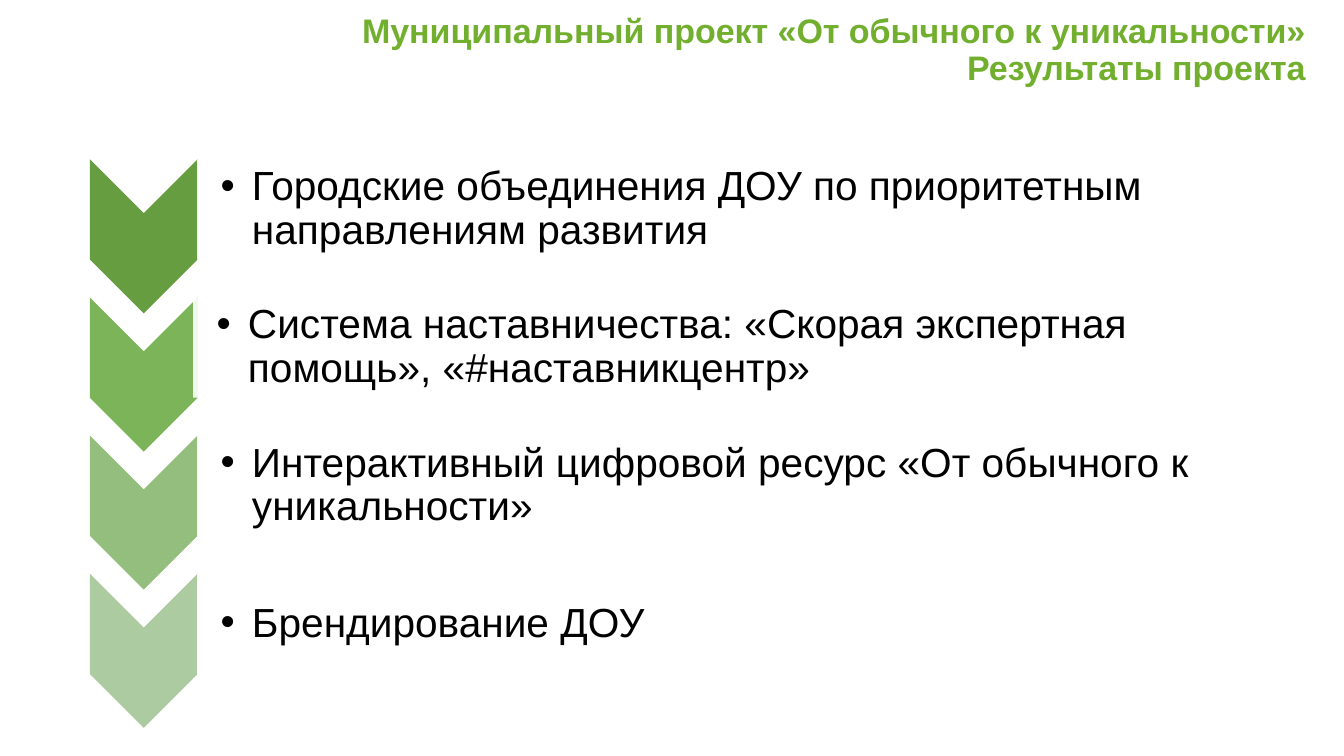
from dataclasses import dataclass

from lxml import etree
from pptx import Presentation
from pptx import util as u
from pptx.dml.color import RGBColor
from pptx.enum import shapes, text
from pptx.oxml.ns import qn


@dataclass(frozen=True)
class Theme:
    font: str = "Arial"
    title_size: float = 24.3
    item_size: float = 29
    title_color: str = "72AF2F"
    item_color: str = "000000"
    panel_color: str = "FFFFFF"
    panel_alpha: int = 90
    spacing: float = 0.9
    indent: float = 0.31


def apply(target, values):
    for name, value in values.items():
        setattr(target, name, value)


class Deck:
    def __init__(self, theme, width, height, layout):
        self.theme = theme
        self.prs = Presentation()
        apply(self.prs, {"slide_width": u.Inches(width), "slide_height": u.Inches(height)})
        self.s = self.prs.slides.add_slide(self.prs.slide_layouts[layout])

    def box(self, left, top, width, height):
        w, h = self.prs.slide_width / 100, self.prs.slide_height / 100
        return [round(v) for v in (left * w, top * h, width * w, height * h)]

    def frame(self, sp, area, margins):
        apply(sp, dict(zip(("left", "top", "width", "height"), self.box(*area))))
        tf = sp.text_frame
        apply(tf, {"word_wrap": True, "auto_size": text.MSO_AUTO_SIZE.NONE,
                   "vertical_anchor": text.MSO_ANCHOR.MIDDLE})
        names = ("margin_left", "margin_top", "margin_right", "margin_bottom")
        apply(tf, dict(zip(names, map(u.Inches, margins))))
        return tf.paragraphs[0]

    def fill_text(self, p, words, size, color, bold, align):
        apply(p, {"alignment": align, "line_spacing": self.theme.spacing,
                  "space_before": u.Pt(0), "space_after": u.Pt(0)})
        for i, line in enumerate(words.split("\n")):
            if i:
                p.add_line_break()
            r = p.add_run()
            r.text = line
            apply(r.font, {"name": self.theme.font, "size": u.Pt(size), "bold": bold})
            r.font.color.rgb = RGBColor.from_string(color)

    def title(self, words, area):
        t = self.theme
        p = self.frame(self.s.shapes.title, area, (0.1, 0.05, 0.1, 0.05))
        self.fill_text(p, words, t.title_size, t.title_color, True, text.PP_ALIGN.RIGHT)

    def turned_shape(self, kind, area, color, alpha=100):
        left, top, width, height = self.box(*area)
        shift = (width - height) // 2
        sp = self.s.shapes.add_shape(kind, left + shift, top - shift, height, width)
        sp.rotation = 90
        sp.shadow.inherit = False
        sp.fill.solid()
        sp.fill.fore_color.rgb = RGBColor.from_string(color)
        sp.line.fill.background()
        if alpha < 100:
            clr = sp._element.spPr.find(qn("a:solidFill")).find(qn("a:srgbClr"))
            etree.SubElement(clr, qn("a:alpha"), val=str(alpha * 1000))

    def item(self, sp, words, area):
        t = self.theme
        self.s.shapes._spTree.append(sp._element)
        p = self.frame(sp, area, (0.23, 0.02, 0.02, 0.02))
        pPr = p._p.get_or_add_pPr()
        hang = u.Inches(t.indent)
        pPr.set("marL", str(hang))
        pPr.set("indent", str(-hang))
        etree.SubElement(pPr, qn("a:buFont"), typeface=t.font)
        etree.SubElement(pPr, qn("a:buChar"), char="•")
        self.fill_text(p, words, t.item_size, t.item_color, False, text.PP_ALIGN.LEFT)


RESULTS = [
    ("669D40", 0, "Городские объединения ДОУ по приоритетным направлениям развития"),
    ("7BB459", -0.3, "Система наставничества: «Скорая экспертная помощь», «#наставникцентр»"),
    ("94BE7D", 0, "Интерактивный цифровой ресурс «От обычного к уникальности»"),
    ("ADCBA0", 0, "Брендирование ДОУ"),
]
ROW_STEP = 18.27
COMPARISON = 4


def main():
    theme = Theme()
    deck = Deck(theme, 13.33, 7.5, COMPARISON)
    deck.title("Муниципальный проект «От обычного к уникальности»\nРезультаты проекта",
               (10.8, 1.47, 87.1, 10.53))
    bodies = list(deck.s.placeholders)[1:]
    for row, (sp, (color, shift, words)) in enumerate(zip(bodies, RESULTS)):
        y = row * ROW_STEP
        deck.turned_shape(shapes.MSO_SHAPE.CHEVRON, (6.68, 21.07 + y, 8.03, 20.4), color)
        deck.turned_shape(shapes.MSO_SHAPE.ROUND_2_SAME_RECTANGLE,
                          (14.67 + shift, 21.13 + y, 82.52, 13.2),
                          theme.panel_color, theme.panel_alpha)
        deck.item(sp, words, (14.7 + shift, 21.73 + y, 82.15, 12))
    deck.prs.save("out.pptx")


if __name__ == "__main__":
    main()
